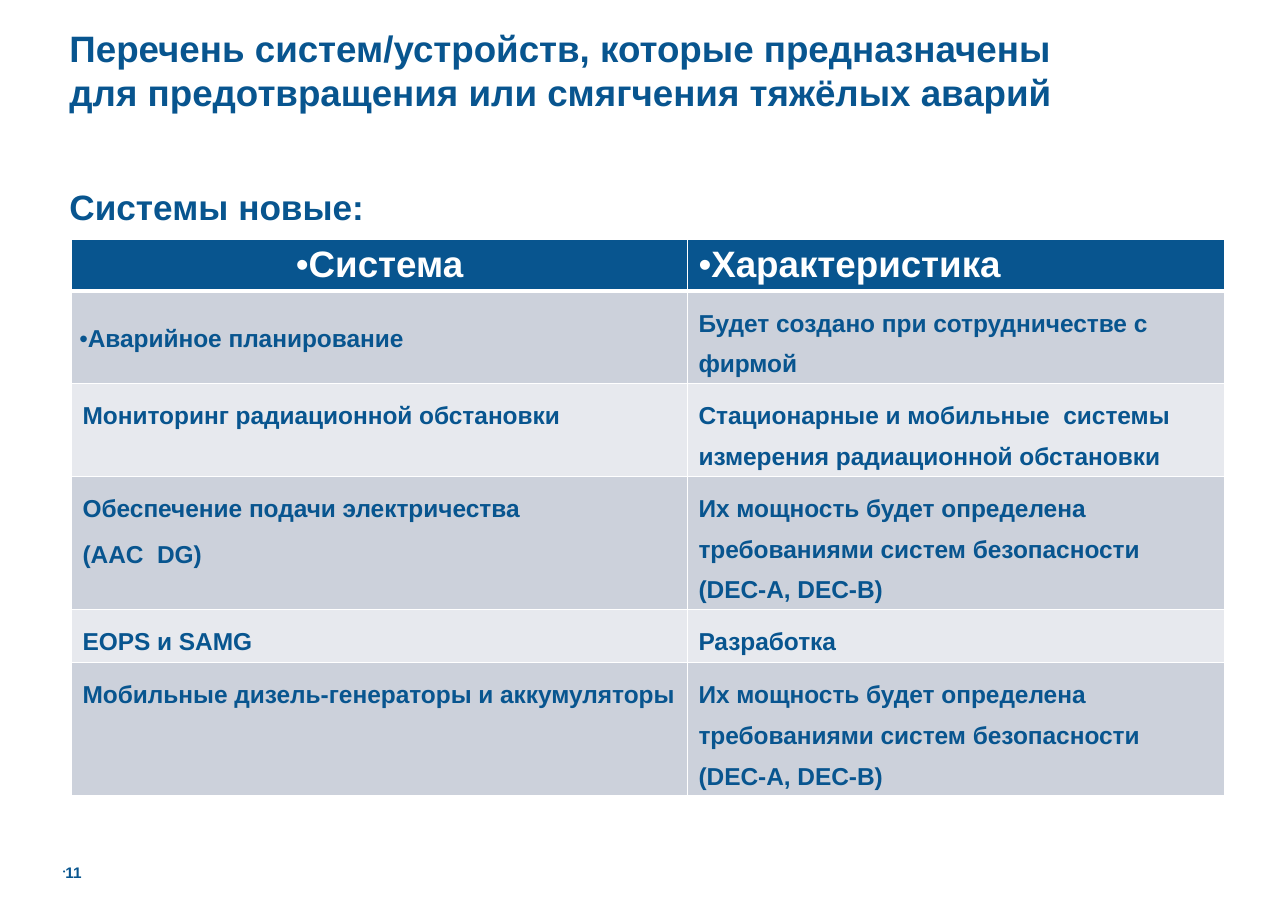
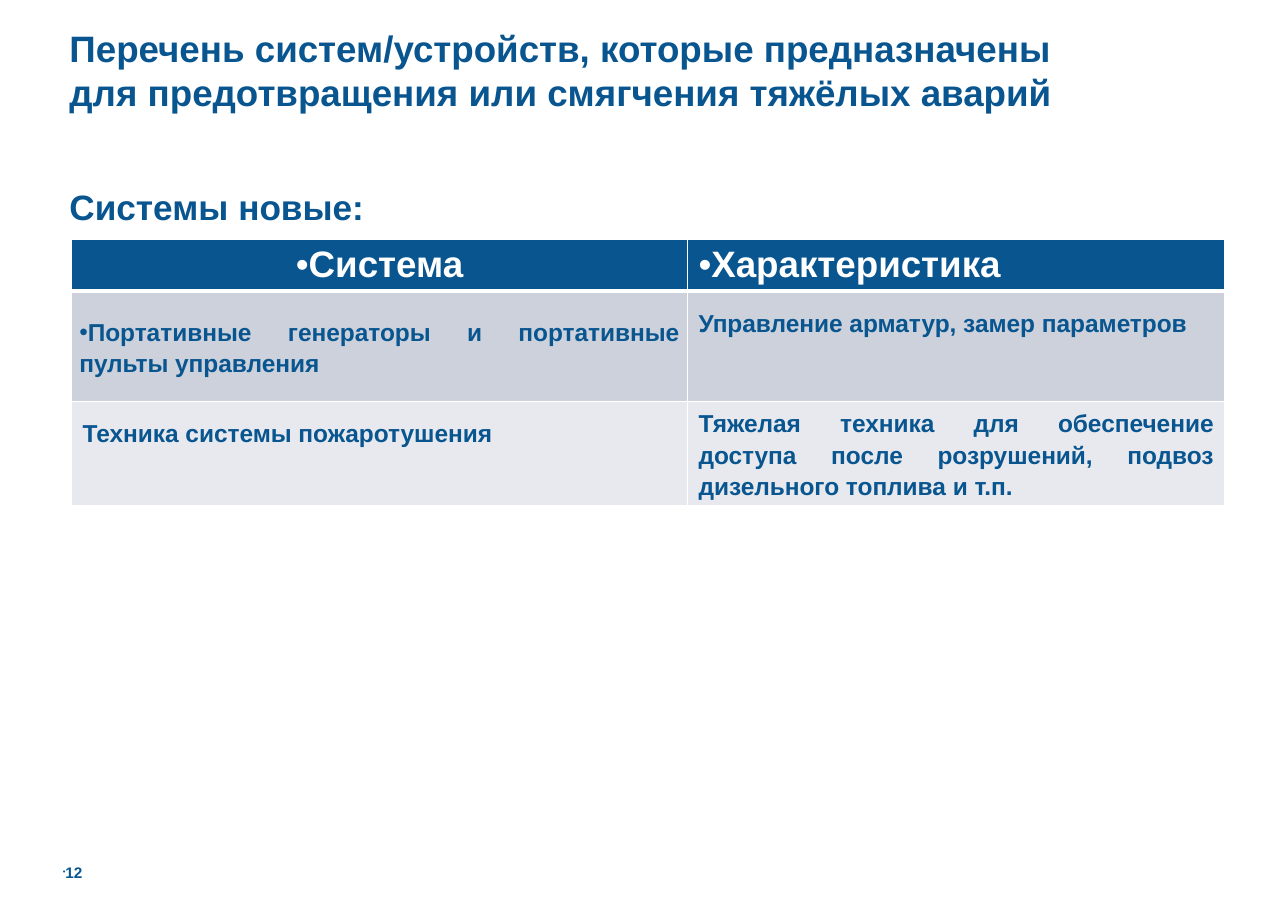
import collections
import lxml.etree
import pptx
import pptx.dml.color
import pptx.enum.text
import pptx.oxml.ns
import pptx.util

FONT = "Arial"
BLUE, WHITE, BAND_DARK, BAND_LIGHT = "08558F", "FFFFFF", "CCD1DB", "E7E9EE"
ALIGN = pptx.enum.text.PP_ALIGN
ANCHOR = pptx.enum.text.MSO_ANCHOR
SLIDE_WIDTH, SLIDE_HEIGHT = pptx.util.Inches(11.69), pptx.util.Inches(8.27)
COLUMN, ROW = SLIDE_WIDTH / 100, SLIDE_HEIGHT / 100

Box = collections.namedtuple("Box", "left top width height")
TextStyle = collections.namedtuple(
    "TextStyle", "size color align spacing bullet_percent", defaults=(BLUE, ALIGN.LEFT, 1, 0))

TITLE_BOX = Box(4.88, 2.42, 78.79, 10.52)
SUBTITLE_BOX = Box(4.88, 17.65, 45.17, 7.5)
NUMBER_BOX = Box(4.88, 92.02, 3.34, 4.72)
TABLE_LEFT, TABLE_TOP = 5.56, 26.24
TABLE_COLUMNS = (47.82, 41.74)
HEADER_ROW = 5.68

TITLE_STYLE = TextStyle(24)
SUBTITLE_STYLE = TextStyle(23, spacing=1.5)
NUMBER_STYLE = TextStyle(10, bullet_percent=50)
HEADER_STYLES = (TextStyle(24, WHITE, ALIGN.CENTER, bullet_percent=100),
                 TextStyle(24, WHITE, bullet_percent=100))
BODY_STYLE = TextStyle(16, spacing=1.5)
JUSTIFIED_STYLE = TextStyle(16, align=ALIGN.JUSTIFY, spacing=1.15)
LEAD_STYLE = JUSTIFIED_STYLE._replace(bullet_percent=100)

TITLE = "Перечень систем/устройств, которые предназначены для предотвращения или смягчения тяжёлых аварий"
SUBTITLE = "Системы новые:"
HEADERS = ("Система", "Характеристика")
POWER = "Их мощность будет определена требованиями систем безопасности (DEC-A, DEC-B)"
FIRST_NUMBER = 11

PAGES = (
    (
        (10.04, "Аварийное планирование", "Будет создано при сотрудничестве с фирмой", BODY_STYLE),
        (10.04, "Мониторинг радиационной обстановки",
         "Стационарные и мобильные  системы измерения радиационной обстановки", BODY_STYLE),
        (14.63, "Обеспечение подачи электричества\n(AAC  DG)", POWER, BODY_STYLE),
        (5.8, "EOPS и SAMG", "Разработка", BODY_STYLE),
        (14.5, "Мобильные дизель-генераторы и аккумуляторы", POWER, BODY_STYLE),
    ),
    (
        (12.1, "Портативные генераторы и портативные пульты управления",
         "Управление арматур, замер параметров", BODY_STYLE),
        (11.49, "Техника системы пожаротушения",
         "Тяжелая техника для обеспечение доступа после розрушений, подвоз дизельного топлива и т.п.",
         JUSTIFIED_STYLE),
    ),
)


def rgb(color):
    return pptx.dml.color.RGBColor.from_string(color)


def add_element(parent, tag, **attributes):
    element = lxml.etree.SubElement(parent, pptx.oxml.ns.qn(tag))
    for name, value in attributes.items():
        element.set(name, str(value))
    return element


def emu_box(box):
    return [round(length * unit) for length, unit in zip(box, (COLUMN, ROW, COLUMN, ROW))]


def write_text(text_frame, text, style):
    text_frame.text = text
    for index, paragraph in enumerate(text_frame.paragraphs):
        paragraph.alignment = style.align
        paragraph.line_spacing = style.spacing
        paragraph.space_before = pptx.util.Pt(0.2 * style.size if index else 0)
        if style.bullet_percent:
            properties = paragraph._p.get_or_add_pPr()
            properties.set("marL", "0")
            properties.set("indent", "0")
            add_element(properties, "a:buSzPct", val=style.bullet_percent * 1000)
            add_element(properties, "a:buFont", typeface=FONT)
            add_element(properties, "a:buChar", char="•")
        for run in paragraph.runs:
            run.font.name = FONT
            run.font.size = pptx.util.Pt(style.size)
            run.font.bold = True
            run.font.color.rgb = rgb(style.color)


def set_frame(text_frame, anchor, side_margin=0, end_margin=0):
    text_frame.word_wrap = True
    text_frame.auto_size = pptx.enum.text.MSO_AUTO_SIZE.NONE
    text_frame.vertical_anchor = anchor
    text_frame.margin_left = text_frame.margin_right = pptx.util.Inches(side_margin)
    text_frame.margin_top = text_frame.margin_bottom = pptx.util.Inches(end_margin)


def place_title(slide, box):
    title = slide.shapes.title
    title.left, title.top, title.width, title.height = emu_box(box)
    set_frame(title.text_frame, ANCHOR.MIDDLE, 0.06, 0.03)
    write_text(title.text_frame, TITLE, TITLE_STYLE)


def add_label(slide, box, text, style, anchor, *margins):
    text_frame = slide.shapes.add_textbox(*emu_box(box)).text_frame
    set_frame(text_frame, anchor, *margins)
    write_text(text_frame, text, style)


def format_cell(cell, fill, bottom_width):
    properties = cell._tc.get_or_add_tcPr()
    for side, width in (("L", 1), ("R", 1), ("T", 1), ("B", bottom_width)):
        line = add_element(properties, "a:ln" + side, w=pptx.util.Pt(width))
        add_element(add_element(line, "a:solidFill"), "a:srgbClr", val=WHITE)
    cell.fill.solid()
    cell.fill.fore_color.rgb = rgb(fill)


def add_systems_table(slide, left, top, systems):
    heights = [HEADER_ROW] + [system[0] for system in systems]
    box = Box(left, top, sum(TABLE_COLUMNS), sum(heights))
    table = slide.shapes.add_table(len(heights), len(TABLE_COLUMNS), *emu_box(box)).table
    table.horz_banding = False
    for column, width in zip(table.columns, TABLE_COLUMNS):
        column.width = round(width * COLUMN)
    for row, height in zip(table.rows, heights):
        row.height = round(height * ROW)
    for cell, text, style in zip(table.rows[0].cells, HEADERS, HEADER_STYLES):
        format_cell(cell, BLUE, 3)
        write_text(cell.text_frame, text, style)
    for index, (height, name, feature, feature_style) in enumerate(systems, 1):
        name_style = LEAD_STYLE if index == 1 else BODY_STYLE
        contents = ((name, name_style), (feature, feature_style))
        for cell, (text, style) in zip(table.rows[index].cells, contents):
            format_cell(cell, BAND_DARK if index % 2 else BAND_LIGHT, 1)
            write_text(cell.text_frame, text, style)
    lead_cell = table.cell(1, 0)
    lead_cell.vertical_anchor = ANCHOR.MIDDLE
    lead_cell.margin_left = lead_cell.margin_right = pptx.util.Inches(0.07)
    lead_cell.margin_top = lead_cell.margin_bottom = 0


def add_systems_slide(presentation, number, systems):
    slide = presentation.slides.add_slide(presentation.slide_layouts.get_by_name("Title Only"))
    place_title(slide, TITLE_BOX)
    add_label(slide, SUBTITLE_BOX, SUBTITLE, SUBTITLE_STYLE, ANCHOR.TOP, 0.06, 0.03)
    add_label(slide, NUMBER_BOX, str(number), NUMBER_STYLE, ANCHOR.BOTTOM)
    add_systems_table(slide, TABLE_LEFT, TABLE_TOP, systems)


def main():
    presentation = pptx.Presentation()
    presentation.slide_width, presentation.slide_height = SLIDE_WIDTH, SLIDE_HEIGHT
    for number, systems in enumerate(PAGES, FIRST_NUMBER):
        add_systems_slide(presentation, number, systems)
    presentation.save("out.pptx")


if __name__ == "__main__":
    main()
